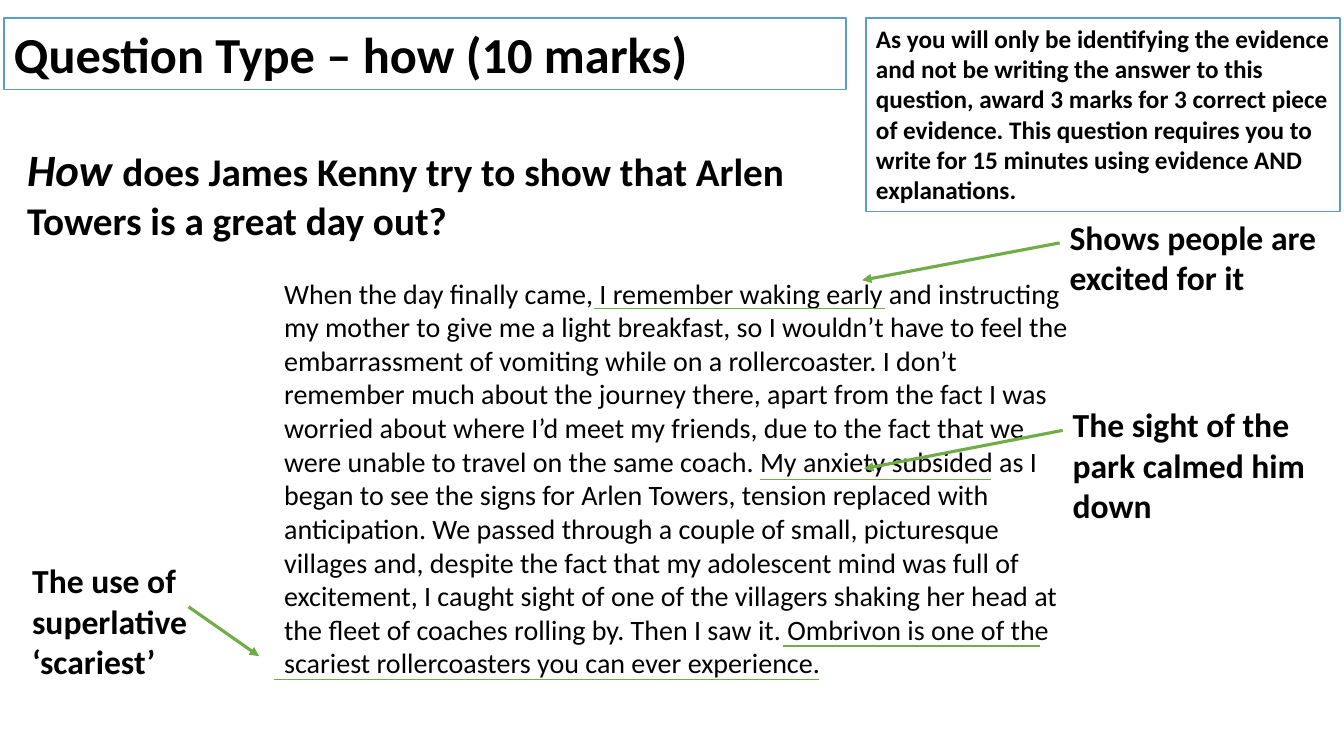
from lxml.etree import SubElement
from pptx import Presentation
from pptx.dml.color import RGBColor
from pptx.enum.shapes import MSO_CONNECTOR, MSO_SHAPE
from pptx.oxml.ns import qn
from pptx.util import Inches, Pt

FONT = "Calibri"
BLACK, WHITE, BLUE, GREEN = "000000", "FFFFFF", "5B9BD5", "70AD47"

TITLE = "Question Type – how (10 marks)"
ADVICE = (
    "As you will only be identifying the evidence and not be writing the answer to this "
    "question, award 3 marks for 3 correct piece of evidence. This question requires you "
    "to write for 15 minutes using evidence AND explanations."
)
QUESTION = ["How ", "does James Kenny try to show that Arlen Towers is a great day out?"]
EXTRACT = (
    "When the day finally came, I remember waking early and instructing my mother to give "
    "me a light breakfast, so I wouldn’t have to feel the embarrassment of vomiting while "
    "on a rollercoaster. I don’t remember much about the journey there, apart from the fact "
    "I was worried about where I’d meet my friends, due to the fact that we were unable to "
    "travel on the same coach. My anxiety subsided as I began to see the signs for Arlen "
    "Towers, tension replaced with anticipation. We passed through a couple of small, "
    "picturesque villages and, despite the fact that my adolescent mind was full of "
    "excitement, I caught sight of one of the villagers shaking her head at the fleet of "
    "coaches rolling by. Then I saw it. Ombrivon is one of the scariest rollercoasters you "
    "can ever experience."
)
# Underlined evidence: left, right, height on the slide
UNDERLINES = [(5.89, 8.78, 3.06), (7.54, 9.83, 4.76), (7.77, 10.32, 6.41), (2.72, 8.12, 6.74)]
# Notes: text, box, arrow start relative to the box, arrow run
ANNOTATIONS = [
    ("Shows people are excited for it", (10.51, 2.1, 3.26, 0.91), (0, 0.31), (-1.96, 0.37)),
    ("The sight of the park calmed him down", (10.54, 3.96, 2.92, 1.31), (0, 0.31), (-1.97, 0.38)),
    ("The use of superlative ‘scariest’", (0.22, 5.51, 2.92, 1.31), (1.65, 0.51), (0.7, 0.49)),
]


def colour(hex_string):
    return RGBColor.from_string(hex_string)


def write(shape, texts, size, bold=True):
    """Fill a shape with one paragraph, one run for each text."""
    frame = shape.text_frame
    frame.word_wrap = True
    para = frame.paragraphs[0]
    for text in texts:
        span = para.add_run()
        span.text = text
        span.font.name = FONT
        span.font.size = Pt(size)
        span.font.bold = bold
        span.font.color.rgb = colour(BLACK)
    return para


def add_text(page, box, texts, size, bold=True):
    return write(page.shapes.add_textbox(*map(Inches, box)), texts, size, bold)


def add_panel(page, box, text, size):
    """Place outlined text on white."""
    panel = page.shapes.add_textbox(*map(Inches, box))
    panel.fill.solid()
    panel.fill.fore_color.rgb = colour(WHITE)
    panel.line.color.rgb = colour(BLUE)
    panel.line.width = Pt(1)
    write(panel, [text], size)


def add_line(page, start, end, width, arrow=False):
    line = page.shapes.add_connector(MSO_CONNECTOR.STRAIGHT, *map(Inches, (*start, *end)))
    line.line.color.rgb = colour(GREEN)
    line.line.width = Pt(width)
    if arrow:
        SubElement(line.line._get_or_add_ln(), qn("a:tailEnd"), type="triangle")
    SubElement(line._element.spPr, qn("a:effectLst"))


def add_question(page, box):
    para = add_text(page, box, QUESTION, 28)
    para.runs[0].font.size = Pt(32)
    para.runs[0].font.italic = True


def add_extract(page, box):
    add_text(page, box, [EXTRACT], 20, bold=False)
    for left, right, height in UNDERLINES:
        add_line(page, (left, height), (right, height), 1)


def add_annotation(page, text, box, offset, run):
    """Place a note and the arrow from it to its evidence."""
    add_text(page, box, [text], 24)
    start = (box[0] + offset[0], box[1] + offset[1])
    add_line(page, start, (start[0] + run[0], start[1] + run[1]), 2.25, arrow=True)


def main():
    deck = Presentation()
    deck.slide_width, deck.slide_height = Inches(13.33), Inches(7.5)
    page = deck.slides.add_slide(deck.slide_layouts[6])
    add_panel(page, (0.04, 0.18, 8.35, 0.71), TITLE, 36)
    add_panel(page, (8.59, 0.18, 4.7, 1.92), ADVICE, 18)
    add_question(page, (0.17, 1.36, 7.73, 1.11))
    add_extract(page, (2.72, 2.69, 8.06, 4.14))
    for annotation in ANNOTATIONS:
        add_annotation(page, *annotation)
    deck.save("out.pptx")


if __name__ == "__main__":
    main()
